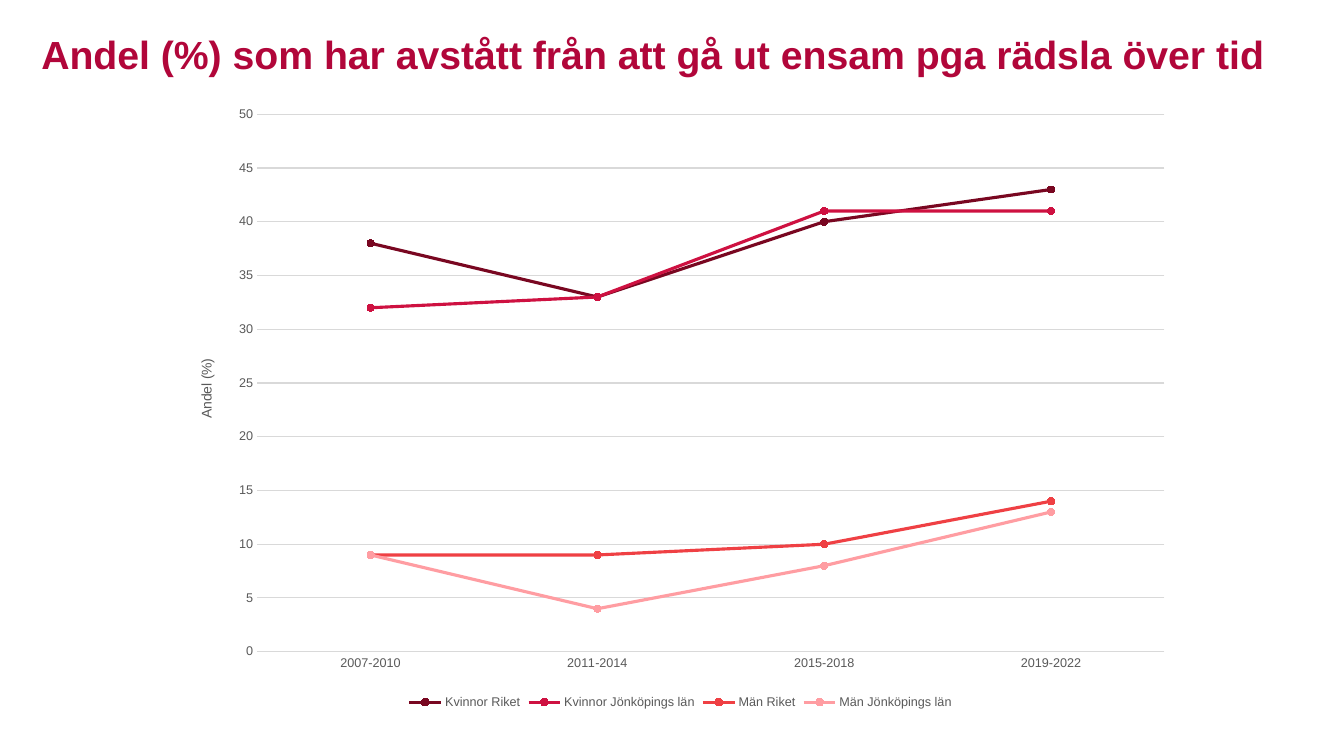
import dataclasses

import pptx
import pptx.chart.data
import pptx.dml.color
import pptx.enum.chart
import pptx.enum.text
import pptx.oxml
import pptx.oxml.ns
import pptx.util
from pptx.util import Inches


@dataclasses.dataclass(frozen=True)
class Theme:
    font: str = "Arial"
    background: str = "FFFFFF"
    title: str = "B1063A"
    label: str = "595959"
    grid: str = "D9D9D9"
    title_size: float = 28
    axis_title_size: float = 10
    label_size: float = 9
    series_width: float = 2.25
    grid_width: float = 0.75
    marker_size: int = 5


THEME = Theme()

PERIODS = ["2007-2010", "2011-2014", "2015-2018", "2019-2022"]
SERIES = [
    ("Kvinnor Riket", (38, 33, 40, 43), "790721"),
    ("Kvinnor Jönköpings län", (32, 33, 41, 41), "CE1141"),
    ("Män Riket", (9, 9, 10, 14), "EF4044"),
    ("Män Jönköpings län", (9, 4, 8, 13), "FF9DA2"),
]


def rgb(color):
    return pptx.dml.color.RGBColor.from_string(color)


def format_font(font, size, color=THEME.label, bold=False):
    font.name = THEME.font
    font.size = pptx.util.Pt(size)
    font.bold = bold
    font.color.rgb = rgb(color)


def write_text(text_frame, text, **font_format):
    paragraph = text_frame.paragraphs[0]
    run = paragraph.add_run()
    run.text = text
    format_font(run.font, **font_format)
    return paragraph


def format_line(line, color, width):
    line.color.rgb = rgb(color)
    line.width = pptx.util.Pt(width)


def add_title(slide, text):
    title = slide.shapes.title
    title.left, title.top = Inches(0.31), Inches(0.25)
    title.width, title.height = Inches(12.48), Inches(0.57)
    frame = title.text_frame
    frame.word_wrap = False
    frame.auto_size = pptx.enum.text.MSO_AUTO_SIZE.SHAPE_TO_FIT_TEXT
    frame.vertical_anchor = pptx.enum.text.MSO_ANCHOR.TOP
    paragraph = write_text(frame, text, size=THEME.title_size,
                           color=THEME.title, bold=True)
    paragraph.alignment = pptx.enum.text.PP_ALIGN.LEFT


def place_plot(chart, **fractions):
    """Fix the inner plot area as fractions of the chart."""
    plot_area = chart.plots[0]._element.getparent()
    for layout in plot_area.findall(pptx.oxml.ns.qn("c:layout")):
        plot_area.remove(layout)
    sizes = "".join(f'<c:{key} val="{value}"/>' for key, value in fractions.items())
    plot_area.insert(0, pptx.oxml.parse_xml(
        f'<c:layout {pptx.oxml.ns.nsdecls("c")}><c:manualLayout>'
        '<c:layoutTarget val="inner"/><c:xMode val="edge"/><c:yMode val="edge"/>'
        f'{sizes}</c:manualLayout></c:layout>'))


def format_axes(chart):
    for axis in (chart.category_axis, chart.value_axis):
        axis.major_tick_mark = pptx.enum.chart.XL_TICK_MARK.NONE
        axis.minor_tick_mark = pptx.enum.chart.XL_TICK_MARK.NONE
        format_font(axis.tick_labels.font, THEME.label_size)
    format_line(chart.category_axis.format.line, THEME.grid, THEME.grid_width)

    value_axis = chart.value_axis
    value_axis.minimum_scale, value_axis.maximum_scale = 0, 50
    value_axis.major_unit = 5
    value_axis.format.line.fill.background()
    format_line(value_axis.major_gridlines.format.line, THEME.grid, THEME.grid_width)
    write_text(value_axis.axis_title.text_frame, "Andel (%)",
               size=THEME.axis_title_size)


def format_series(series, color):
    series.smooth = False
    format_line(series.format.line, color, THEME.series_width)
    marker = series.marker
    marker.style = pptx.enum.chart.XL_MARKER_STYLE.CIRCLE
    marker.size = THEME.marker_size
    marker.format.fill.solid()
    marker.format.fill.fore_color.rgb = rgb(color)
    format_line(marker.format.line, color, THEME.grid_width)


def add_line_chart(slide):
    data = pptx.chart.data.CategoryChartData(number_format="0")
    data.categories = PERIODS
    for name, values, _ in SERIES:
        data.add_series(name, values)
    chart = slide.shapes.add_chart(
        pptx.enum.chart.XL_CHART_TYPE.LINE_MARKERS,
        Inches(1.75), Inches(0.95), Inches(10), Inches(6.13), data).chart
    chart.has_title = False
    chart.font.name = THEME.font
    chart.plots[0].vary_by_categories = False
    for series, (_, _, color) in zip(chart.plots[0].series, SERIES):
        format_series(series, color)
    format_axes(chart)
    place_plot(chart, x=0.08, y=0.03, w=0.9, h=0.87)

    # Legend
    chart.has_legend = True
    chart.legend.position = pptx.enum.chart.XL_LEGEND_POSITION.BOTTOM
    chart.legend.include_in_layout = False
    format_font(chart.legend.font, THEME.label_size)


def main():
    presentation = pptx.Presentation()
    presentation.slide_width = Inches(13.33)
    presentation.slide_height = Inches(7.5)

    # Title Only layout
    slide = presentation.slides.add_slide(presentation.slide_layouts[5])
    slide.background.fill.solid()
    slide.background.fill.fore_color.rgb = rgb(THEME.background)

    add_title(slide, "Andel (%) som har avstått från att gå ut ensam pga rädsla över tid")
    add_line_chart(slide)
    presentation.save("out.pptx")


if __name__ == "__main__":
    main()
